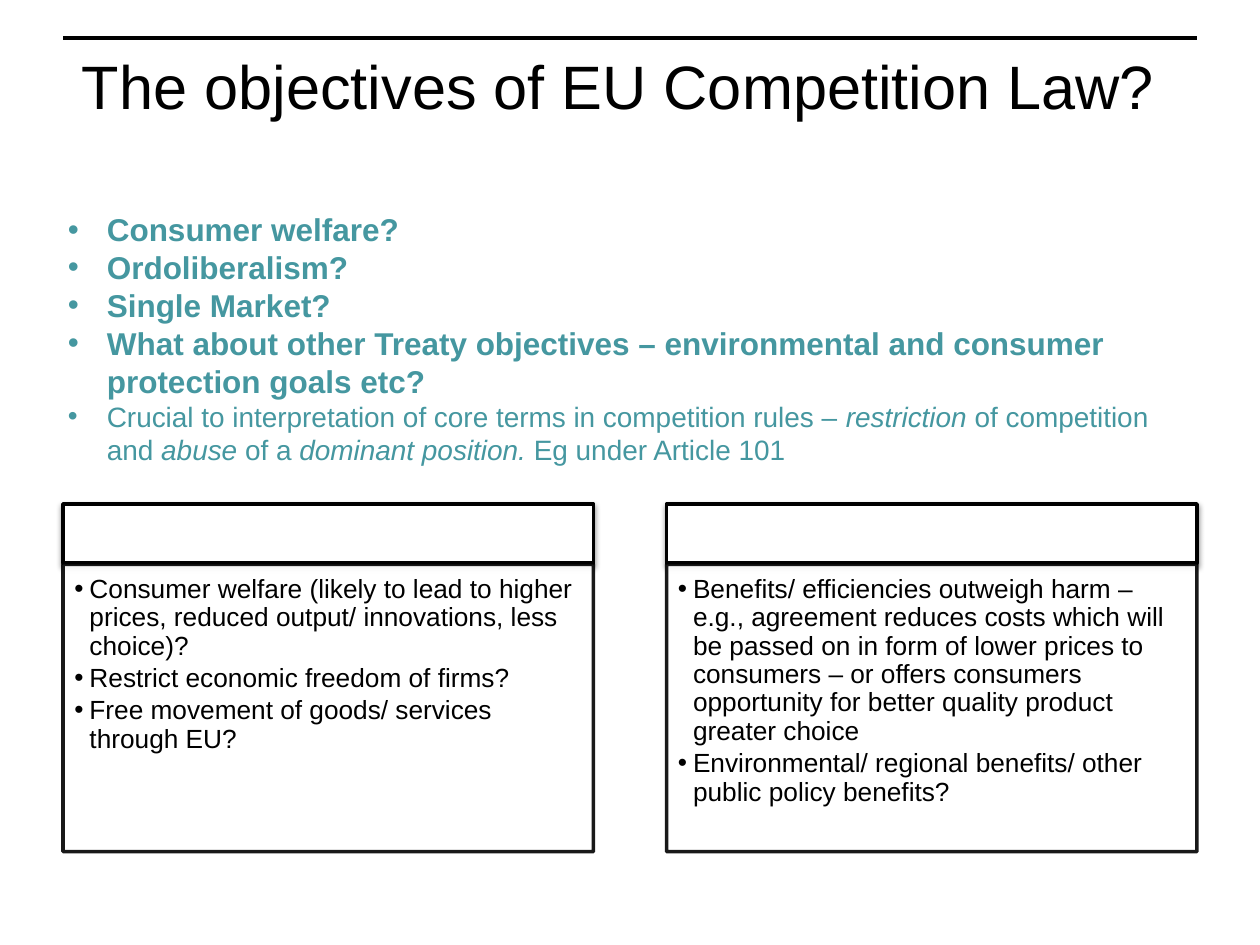
"""Build a slide on the objectives of EU competition law."""
from lxml import etree
from pptx import Presentation
from pptx.dml.color import RGBColor
from pptx.enum.shapes import MSO_CONNECTOR, MSO_SHAPE
from pptx.enum.text import MSO_ANCHOR, PP_ALIGN
from pptx.oxml.ns import qn
from pptx.util import Inches, Pt

RECTANGLE = MSO_SHAPE.RECTANGLE
STRAIGHT = MSO_CONNECTOR.STRAIGHT
TOP = MSO_ANCHOR.TOP
LEFT_ALIGNED = PP_ALIGN.LEFT

BLACK = RGBColor(0, 0, 0)
WHITE = RGBColor(255, 255, 255)
TEAL = RGBColor(0x45, 0x97, 0xA0)
FONT = "Arial"

WIDTH, HEIGHT = 10, 7.5
MARGIN = 0.05 * WIDTH
CONTENT_WIDTH = WIDTH - 2 * MARGIN
RULE_TOP = 0.04 * HEIGHT
CARD_WIDTH = 4.21
CARD_STEP = CONTENT_WIDTH - CARD_WIDTH
HEADER_TOP, HEADER_HEIGHT = 4, 0.47
BODY_TOP, BODY_HEIGHT = 4.48, 2.28

QUESTIONS = [
    "Consumer welfare?",
    "Ordoliberalism?",
    "Single Market?",
    "What about other Treaty objectives – environmental and consumer protection goals etc?",
]
INTERPRETATION = [
    ("Crucial to interpretation of core terms in competition rules – ", False),
    ("restriction ", True),
    ("of competition and ", False),
    ("abuse ", True),
    ("of a ", False),
    ("dominant position. ", True),
    ("Eg under Article 101", False),
]
CARDS = [
    [
        "Consumer welfare (likely to lead to higher prices, reduced output/ innovations, less choice)?",
        "Restrict economic freedom of firms?",
        "Free movement of goods/ services through EU?",
    ],
    [
        "Benefits/ efficiencies outweigh harm – e.g., agreement reduces costs which will be passed on "
        "in form of lower prices to consumers – or offers consumers opportunity for better quality "
        "product greater choice",
        "Environmental/ regional benefits/ other public policy benefits?",
    ],
]


def add_child(parent, tag, **attributes):
    """Append a DrawingML element and return it."""
    child = etree.SubElement(parent, qn(tag))
    for name, value in attributes.items():
        child.set(name, str(value))
    return child


def add_rule(page):
    """Draw the line above the title."""
    rule = page.shapes.add_connector(
        STRAIGHT, Inches(MARGIN), Inches(RULE_TOP), Inches(WIDTH - MARGIN), Inches(RULE_TOP))
    rule.line.color.rgb = BLACK
    rule.line.width = Pt(2)
    add_child(rule._element.spPr, "a:effectLst")


def add_panel(page, left, top, height, opacity=None, shadow=False):
    """Draw one outlined part of a card."""
    panel = page.shapes.add_shape(
        RECTANGLE, Inches(left), Inches(top), Inches(CARD_WIDTH), Inches(height))
    panel.fill.solid()
    panel.fill.fore_color.rgb = WHITE
    panel.line.color.rgb = BLACK
    panel.line.width = Pt(2)
    panel.shadow.inherit = False
    properties = panel._element.spPr
    if opacity:
        for color in list(properties.iter(qn("a:srgbClr"))):
            add_child(color, "a:alpha", val=opacity * 1000)
    if shadow:
        effect = add_child(properties.find(qn("a:effectLst")), "a:outerShdw", blurRad=Pt(3.1),
                           dist=Pt(1.6), dir=90 * 60000, rotWithShape=0)
        color = add_child(effect, "a:srgbClr", val=BLACK)
        add_child(color, "a:alpha", val=38000)


def add_text_box(page, left, top, width, height, insets=(0.1, 0.05, 0.1, 0.05)):
    """Add a wrapping text box and return its text frame."""
    frame = page.shapes.add_textbox(
        Inches(left), Inches(top), Inches(width), Inches(height)).text_frame
    frame.word_wrap = True
    frame.vertical_anchor = TOP
    (frame.margin_left, frame.margin_top,
     frame.margin_right, frame.margin_bottom) = map(Inches, insets)
    return frame


def add_paragraph(frame, text, size, color=BLACK, bold=False, indent=0, spacing=1, after=0, level=0):
    """Add a paragraph of plain text or of (text, italic) spans."""
    first = frame.paragraphs[0]
    para = frame.add_paragraph() if first.runs else first
    para.alignment = LEFT_ALIGNED
    para.level = level
    para.line_spacing = spacing
    para.space_before = Pt(0)
    para.space_after = Pt(after)
    if indent:
        properties = para._p.get_or_add_pPr()
        properties.set("marL", str(Inches(indent)))
        properties.set("indent", str(-Inches(indent)))
        add_child(properties, "a:buFont", typeface=FONT)
        add_child(properties, "a:buChar", char="•")
    for words, italic in [(text, False)] if isinstance(text, str) else text:
        span = para.add_run()
        span.text = words
        span.font.name = FONT
        span.font.size = Pt(size)
        span.font.bold = bold
        span.font.italic = italic
        span.font.color.rgb = color


def add_card(page, left, points):
    """Draw a card with an empty header and a bulleted body."""
    add_panel(page, left, HEADER_TOP, HEADER_HEIGHT, shadow=True)
    add_panel(page, left, BODY_TOP, BODY_HEIGHT, opacity=90)
    frame = add_text_box(page, left, BODY_TOP, CARD_WIDTH, BODY_HEIGHT, (0.09, 0.09, 0.12, 0.13))
    for point in points:
        add_paragraph(frame, point, 15, indent=0.12, spacing=0.9, after=2.25, level=1)


def main():
    """Build and save the slide."""
    deck = Presentation()
    deck.slide_width, deck.slide_height = Inches(WIDTH), Inches(HEIGHT)
    page = deck.slides.add_slide(deck.slide_layouts[6])
    add_rule(page)
    title = add_text_box(page, MARGIN, RULE_TOP, CONTENT_WIDTH, 1.25, (0.15,) * 4)
    add_paragraph(title, "The objectives of EU Competition Law?", 35, spacing=0.9, after=12.25)
    for column, points in enumerate(CARDS):
        add_card(page, MARGIN + column * CARD_STEP, points)
    objectives = add_text_box(page, 0.44, 1.62, 9.06, 2.52)
    for question in QUESTIONS:
        add_paragraph(objectives, question, 18, color=TEAL, bold=True, indent=0.31)
    add_paragraph(objectives, INTERPRETATION, 16, color=TEAL, indent=0.31)
    deck.save("out.pptx")


main()
